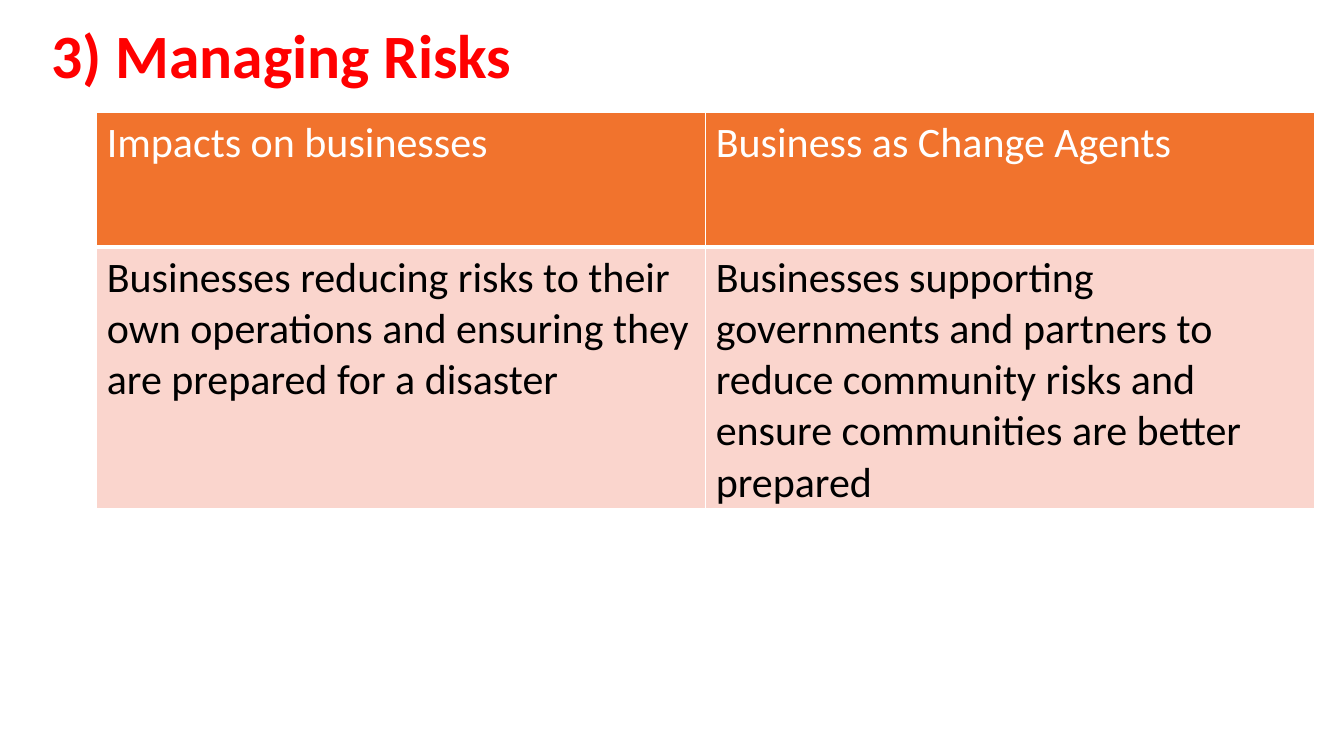
from lxml import etree
from pptx import Presentation
from pptx.dml.color import RGBColor
from pptx.enum.text import MSO_ANCHOR
from pptx.oxml.ns import qn
from pptx.util import Inches, Pt

MIDDLE = MSO_ANCHOR.MIDDLE
FONT = "Calibri"
WHITE = "FFFFFF"

TITLE = "3) Managing Risks"
# Each row: height, fill, text colour, bottom border in points, cell texts
ROWS = [
    (1.33, "F1732D", WHITE, 3,
     ["Impacts on businesses", "Business as Change Agents"]),
    (2.6, "FAD5CD", "000000", 1,
     ["Businesses reducing risks to their own operations and ensuring "
      "they are prepared for a disaster",
      "Businesses supporting governments and partners to reduce community "
      "risks and ensure communities are better prepared"]),
]
TABLE_LEFT, TABLE_TOP, COLUMN_WIDTH = 0.96, 1.12, 6.04


def color(hex_value):
    return RGBColor.from_string(hex_value)


def add_run(paragraph, text, size, hex_value, bold=False):
    run = paragraph.add_run()
    run.text = text
    run.font.name = FONT
    run.font.size = Pt(size)
    run.font.bold = bold
    run.font.color.rgb = color(hex_value)


def add_borders(cell, top, bottom):
    """Draw white cell borders; must run before the cell fill is set."""
    properties = cell._tc.get_or_add_tcPr()
    for side, width in (("L", 1), ("R", 1), ("T", top), ("B", bottom)):
        line = etree.SubElement(properties, qn(f"a:ln{side}"), w=str(Pt(width)))
        fill = etree.SubElement(line, qn("a:solidFill"))
        etree.SubElement(fill, qn("a:srgbClr"), val=WHITE)


def add_title(slide):
    box = slide.shapes.add_textbox(
        Inches(0.41), Inches(0.09), Inches(8.65), Inches(0.99))
    frame = box.text_frame
    frame.word_wrap = True
    frame.vertical_anchor = MIDDLE
    paragraph = frame.paragraphs[0]
    paragraph.line_spacing = 0.9
    add_run(paragraph, TITLE, 44, "FF0000", bold=True)


def add_risk_table(slide):
    column_count = len(ROWS[0][4])
    table = slide.shapes.add_table(
        len(ROWS), column_count, Inches(TABLE_LEFT), Inches(TABLE_TOP),
        Inches(COLUMN_WIDTH * column_count),
        Inches(sum(row[0] for row in ROWS))).table
    table.horz_banding = False
    for column in table.columns:
        column.width = Inches(COLUMN_WIDTH)

    top = 1
    for row_index, (height, fill, text_color, bottom, texts) in enumerate(ROWS):
        table.rows[row_index].height = Inches(height)
        for column_index, text in enumerate(texts):
            cell = table.cell(row_index, column_index)
            add_borders(cell, top, bottom)
            cell.fill.solid()
            cell.fill.fore_color.rgb = color(fill)
            add_run(cell.text_frame.paragraphs[0], text, 30, text_color)
        top = bottom


def main():
    presentation = Presentation()
    presentation.slide_width = Inches(13.33)
    presentation.slide_height = Inches(7.5)
    slide = presentation.slides.add_slide(presentation.slide_layouts[6])
    add_title(slide)
    add_risk_table(slide)
    presentation.save("out.pptx")


if __name__ == "__main__":
    main()
